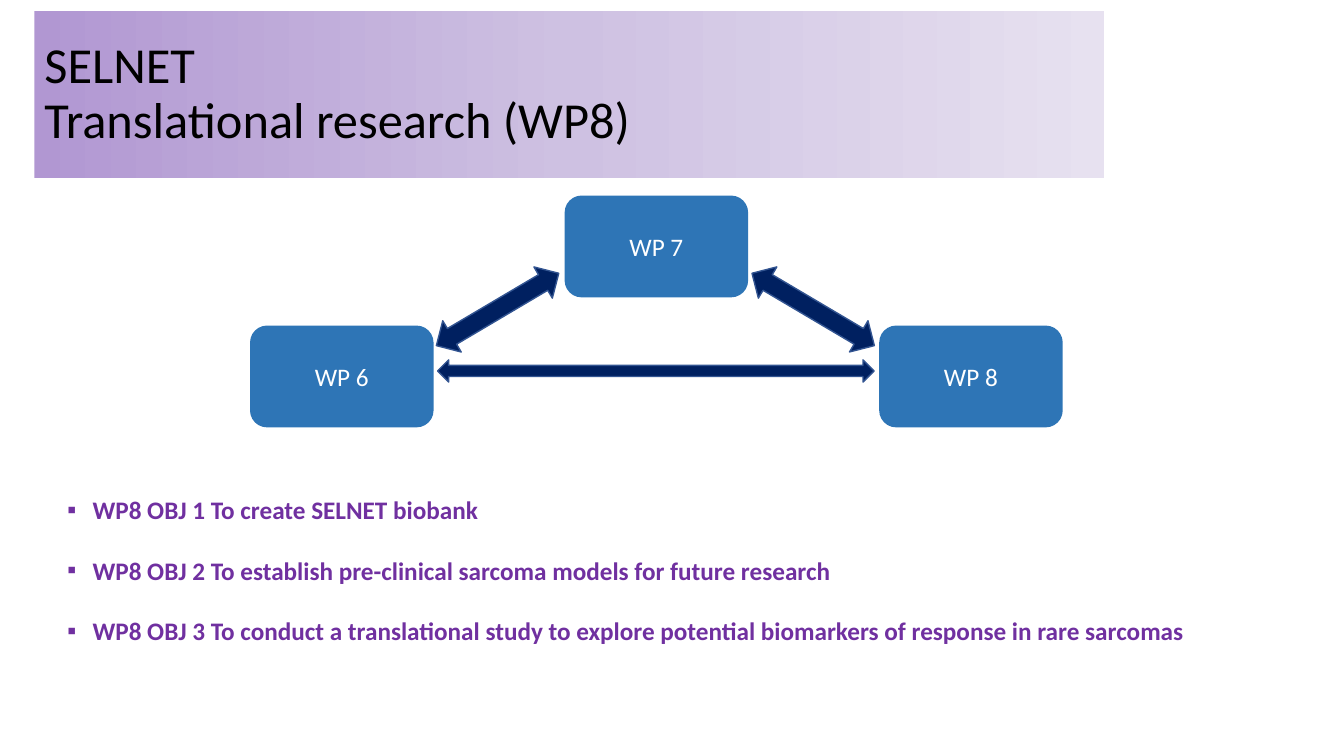
from copy import deepcopy
from dataclasses import dataclass

from lxml import etree
from pptx import Presentation
from pptx import util as u
from pptx.dml.color import RGBColor
from pptx.enum import shapes, text
from pptx.oxml import ns

BLACK = RGBColor(0x00, 0x00, 0x00)
WHITE = RGBColor(0xFF, 0xFF, 0xFF)
PURPLE = RGBColor(0x70, 0x30, 0xA0)
BLUE = RGBColor(0x2E, 0x75, 0xB6)
NAVY = RGBColor(0x00, 0x20, 0x60)
EDGE = RGBColor(0x32, 0x54, 0x91)
BANNER_COLOURS = (
    RGBColor(0xB1, 0x97, 0xD2),
    RGBColor(0xCE, 0xC1, 0xE2),
    RGBColor(0xE7, 0xE1, 0xF0),
)

FONT = "Calibri"
TITLE_FORMAT = {"name": FONT, "size": u.Pt(36), "bold": False}
PACKAGE_FORMAT = {"name": FONT, "size": u.Pt(18)}
OBJECTIVE_FORMAT = {"name": FONT, "size": u.Pt(18), "bold": True}

TITLE = "SELNET \vTranslational research (WP8)"
OBJECTIVES = (
    "WP8 OBJ 1 To create SELNET biobank",
    "WP8 OBJ 2 To establish pre-clinical sarcoma models for future research",
    "WP8 OBJ 3 To conduct a translational study to explore potential "
    "biomarkers of response in rare sarcomas",
)


@dataclass
class Place:
    left: float
    top: float
    width: float
    height: float

    def lengths(self) -> tuple:
        return tuple(
            u.Inches(value)
            for value in (self.left, self.top, self.width, self.height)
        )


@dataclass
class WorkPackage:
    label: str
    place: Place


@dataclass
class Arrow:
    place: Place
    rotation: float = 0


PACKAGES = [
    WorkPackage(f"WP {6 + step}", Place(2.48 + 3.12 * step, top, 1.82, 1.01))
    for step, top in enumerate((3.23, 1.94, 3.23))
]
ARROWS = (
    Arrow(Place(4.23, 2.89, 1.41, 0.36), -30.6),
    Arrow(Place(4.34, 3.57, 4.33, 0.22)),
    Arrow(Place(7.36, 2.89, 1.41, 0.36), 30.6),
)


def format_span(span, values: dict, colour: RGBColor) -> None:
    for name, value in values.items():
        setattr(span.font, name, value)
    span.font.color.rgb = colour


def fill_banner(title) -> None:
    title.fill.gradient()
    title.fill.gradient_angle = 0
    stop_list = title._element.spPr.find(".//" + ns.qn("a:gsLst"))
    stop_list.insert(1, deepcopy(stop_list[0]))
    for index, (stop, colour) in enumerate(
        zip(title.fill.gradient_stops, BANNER_COLOURS)
    ):
        stop.position = index / 2
        stop.color.rgb = colour


def draw_title(page) -> None:
    title = page.shapes.title
    place = Place(0.34, 0.11, 10.61, 1.66)
    title.left, title.top, title.width, title.height = place.lengths()
    fill_banner(title)
    frame = title.text_frame
    frame.text = TITLE
    frame.auto_size = text.MSO_AUTO_SIZE.NONE
    frame.vertical_anchor = text.MSO_ANCHOR.MIDDLE
    para = frame.paragraphs[0]
    para.alignment = text.PP_ALIGN.LEFT
    para.line_spacing = 0.9
    for span in para.runs:
        format_span(span, TITLE_FORMAT, BLACK)


def add_bullet(para) -> None:
    properties = para._p.get_or_add_pPr()
    properties.set("marL", str(u.Inches(0.25)))
    properties.set("indent", str(u.Inches(-0.25)))
    etree.SubElement(properties, ns.qn("a:buFont"), typeface="Wingdings")
    etree.SubElement(properties, ns.qn("a:buChar"), char="▪")
    properties[-2].set("typeface", FONT)


def draw_objectives(page) -> None:
    box = page.shapes.add_textbox(*Place(0.57, 4.56, 12.34, 2.9).lengths())
    frame = box.text_frame
    frame.word_wrap = True
    frame.text = "\n".join(OBJECTIVES)
    for para in frame.paragraphs:
        para.line_spacing = 2.0
        add_bullet(para)
        format_span(para.runs[0], OBJECTIVE_FORMAT, PURPLE)


def draw_shape(page, kind, place: Place, colour: RGBColor):
    shape = page.shapes.add_shape(kind, *place.lengths())
    shape.shadow.inherit = False
    shape.fill.solid()
    shape.fill.fore_color.rgb = colour
    return shape


def draw_package(page, package: WorkPackage) -> None:
    kind = shapes.MSO_SHAPE.ROUNDED_RECTANGLE
    box = draw_shape(page, kind, package.place, BLUE)
    box.line.fill.background()
    frame = box.text_frame
    frame.text = package.label
    frame.vertical_anchor = text.MSO_ANCHOR.MIDDLE
    para = frame.paragraphs[0]
    para.alignment = text.PP_ALIGN.CENTER
    format_span(para.runs[0], PACKAGE_FORMAT, WHITE)


def draw_arrow(page, arrow: Arrow) -> None:
    kind = shapes.MSO_SHAPE.LEFT_RIGHT_ARROW
    shape = draw_shape(page, kind, arrow.place, NAVY)
    shape.rotation = arrow.rotation
    shape.line.color.rgb = EDGE
    shape.line.width = u.Pt(1)


def main() -> None:
    deck = Presentation()
    deck.slide_width = u.Inches(13.33)
    deck.slide_height = u.Inches(7.5)
    page = deck.slides.add_slide(deck.slide_layouts.get_by_name("Title Only"))
    draw_title(page)
    draw_objectives(page)
    for package in PACKAGES:
        draw_package(page, package)
    for arrow in ARROWS:
        draw_arrow(page, arrow)
    deck.save("out.pptx")


if __name__ == "__main__":
    main()
